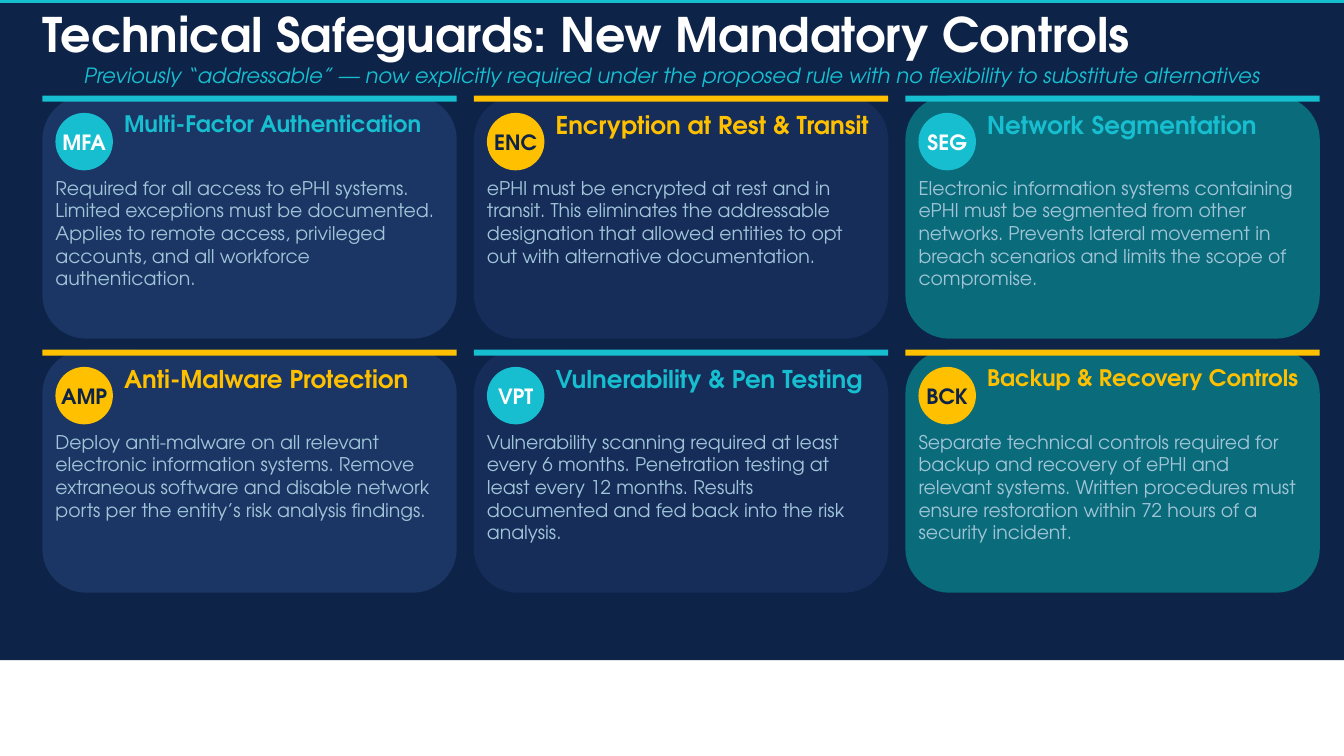
from pptx import Presentation
from pptx.dml.color import RGBColor
from pptx.enum.shapes import MSO_SHAPE
from pptx.enum.text import MSO_ANCHOR, PP_ALIGN
from pptx.util import Emu, Pt

EMU_PER_PX = 9144  # 100 px to the inch

NAVY = RGBColor(0x0D, 0x23, 0x47)
TEAL = RGBColor(0x17, 0xBE, 0xD0)
GOLD = RGBColor(0xFF, 0xC0, 0x00)
WHITE = RGBColor(0xFF, 0xFF, 0xFF)
MIST = RGBColor(0xA0, 0xC4, 0xD8)
CARD_FILLS = (
    RGBColor(0x1B, 0x36, 0x64),
    RGBColor(0x16, 0x2D, 0x5A),
    RGBColor(0x0A, 0x6B, 0x7A),
)

# Card grid
LEFT, TOP = 42, 95
CARD_WIDTH, CARD_HEIGHT = 411, 241
COLUMN_STEP, ROW_STEP = 428, 252

# Badge, heading, heading size, description
CONTROLS = [
    ("MFA", "Multi-Factor Authentication", 16.2,
     "Required for all access to ePHI systems. Limited exceptions must be "
     "documented. Applies to remote access, privileged accounts, and all "
     "workforce authentication."),
    ("ENC", "Encryption at Rest & Transit", 17.5,
     "ePHI must be encrypted at rest and in transit. This eliminates the "
     "addressable designation that allowed entities to opt out with "
     "alternative documentation."),
    ("SEG", "Network Segmentation", 17.5,
     "Electronic information systems containing ePHI must be segmented from "
     "other networks. Prevents lateral movement in breach scenarios and "
     "limits the scope of compromise."),
    ("AMP", "Anti-Malware Protection", 17.5,
     "Deploy anti-malware on all relevant electronic information systems. "
     "Remove extraneous software and disable network ports per the entity’s "
     "risk analysis findings."),
    ("VPT", "Vulnerability & Pen Testing", 17.5,
     "Vulnerability scanning required at least every 6 months. Penetration "
     "testing at least every 12 months. Results documented and fed back into "
     "the risk analysis."),
    ("BCK", "Backup & Recovery Controls", 16.2,
     "Separate technical controls required for backup and recovery of ePHI "
     "and relevant systems. Written procedures must ensure restoration within "
     "72 hours of a security incident."),
]


class SlideWriter:
    """Holds the text style and the current slide."""

    font_name = "TeX Gyre Adventor"

    def __init__(self, page):
        self.page = page

    def shape(self, kind, bounds, color, corner=None):
        shape = self.page.shapes.add_shape(
            kind, *(Emu(px * EMU_PER_PX) for px in bounds))
        shape.shadow.inherit = False
        shape.fill.solid()
        shape.fill.fore_color.rgb = color
        shape.line.fill.background()
        if corner is not None:
            shape.adjustments[0] = corner

    def text(self, bounds, words, size, color, align=PP_ALIGN.LEFT,
             anchor=MSO_ANCHOR.TOP, **style):
        box = self.page.shapes.add_textbox(
            *(Emu(px * EMU_PER_PX) for px in bounds))
        frame = box.text_frame
        frame_format = {"word_wrap": True, "vertical_anchor": anchor,
                        "margin_left": 0, "margin_top": 0,
                        "margin_right": 0, "margin_bottom": 0}
        for name, value in frame_format.items():
            setattr(frame, name, value)
        para = frame.paragraphs[0]
        para.alignment = align
        span = para.add_run()
        span.text = words
        span_format = {"name": self.font_name, "size": Pt(size), **style}
        for name, value in span_format.items():
            setattr(span.font, name, value)
        span.font.color.rgb = color

    def card(self, left, top, fill, accent, control):
        badge, heading, heading_size, description = control
        # Panel with accent bar
        self.shape(MSO_SHAPE.ROUNDED_RECTANGLE,
                   (left, top, CARD_WIDTH, CARD_HEIGHT), fill, corner=0.18)
        self.shape(MSO_SHAPE.RECTANGLE, (left, top, CARD_WIDTH, 6), accent)
        # Round badge
        circle = (left + 13, top + 17, 57, 57)
        self.shape(MSO_SHAPE.OVAL, circle, accent)
        self.text(circle, badge, 15, WHITE if accent == TEAL else NAVY,
                  PP_ALIGN.CENTER, MSO_ANCHOR.MIDDLE, bold=True)
        # Heading and description
        self.text((left + 81, top + 14, 315, 35), heading, heading_size,
                  accent, bold=True)
        self.text((left + 13, top + 80, 385, 151), description, 13.5, MIST)


def main():
    deck = Presentation()
    deck.slide_width = Emu(1333 * EMU_PER_PX)
    deck.slide_height = Emu(750 * EMU_PER_PX)
    writer = SlideWriter(deck.slides.add_slide(deck.slide_layouts[6]))

    # Backdrop and top rule
    writer.shape(MSO_SHAPE.RECTANGLE, (0, 0, 1333, 655), NAVY)
    writer.shape(MSO_SHAPE.RECTANGLE, (0, 0, 1333, 3), TEAL)

    # Title and subtitle
    writer.text((LEFT, 6, 1250, 55),
                "Technical Safeguards: New Mandatory Controls",
                34, WHITE, anchor=MSO_ANCHOR.MIDDLE, bold=True)
    writer.text((LEFT, 63, 1250, 24),
                "Previously “addressable” — now explicitly required under the "
                "proposed rule with no flexibility to substitute alternatives",
                15, TEAL, PP_ALIGN.CENTER, MSO_ANCHOR.MIDDLE, italic=True)

    # Control cards, with accents alternating
    for index, control in enumerate(CONTROLS):
        row, column = divmod(index, len(CARD_FILLS))
        writer.card(LEFT + column * COLUMN_STEP, TOP + row * ROW_STEP,
                    CARD_FILLS[column], (TEAL, GOLD)[index % 2], control)

    deck.save("out.pptx")


if __name__ == "__main__":
    main()
